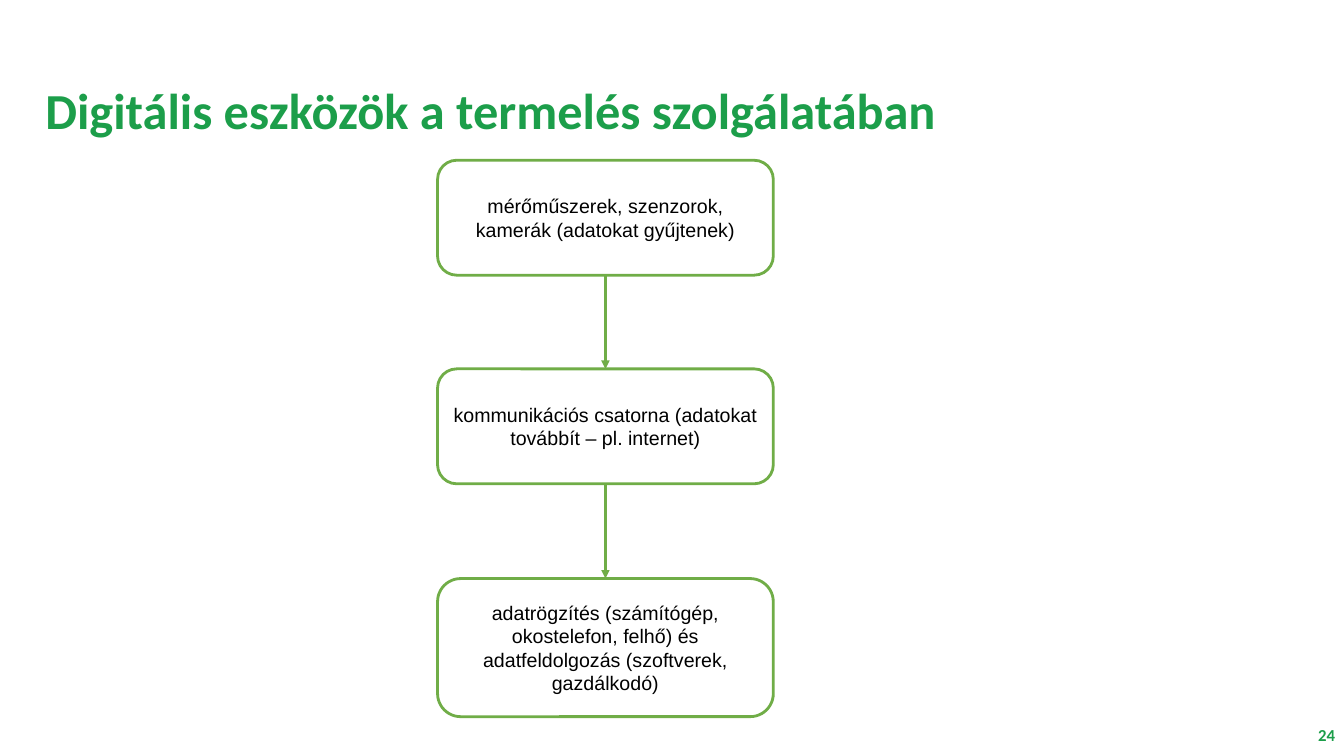
from dataclasses import dataclass
from itertools import pairwise

from lxml import etree
from pptx import Presentation
from pptx.dml.color import RGBColor
from pptx.enum.shapes import MSO_CONNECTOR, MSO_SHAPE
from pptx.enum.text import MSO_ANCHOR, PP_ALIGN
from pptx.oxml.ns import qn
from pptx.util import Inches, Pt

ROUNDED = MSO_SHAPE.ROUNDED_RECTANGLE
STRAIGHT = MSO_CONNECTOR.STRAIGHT
MIDDLE = MSO_ANCHOR.MIDDLE
LEFT, CENTER, RIGHT = PP_ALIGN.LEFT, PP_ALIGN.CENTER, PP_ALIGN.RIGHT


@dataclass(frozen=True)
class Theme:
    """Colours, fonts and sizes of the slide."""
    heading: RGBColor = RGBColor(0x1C, 0x9E, 0x4A)
    outline: RGBColor = RGBColor(0x70, 0xAD, 0x47)
    paper: RGBColor = RGBColor(0xFF, 0xFF, 0xFF)
    ink: RGBColor = RGBColor(0, 0, 0)
    heading_font: str = "Calibri"
    body_font: str = "Arial"
    title_size: int = 36
    step_size: int = 14
    number_size: int = 12
    line_width: int = 2


THEME = Theme()
STEPS = [
    ("mérőműszerek, szenzorok, kamerák (adatokat gyűjtenek)", 0, 1.14),
    ("kommunikációs csatorna (adatokat továbbít – pl. internet)", 2.07, 1.14),
    ("adatrögzítés (számítógép, okostelefon, felhő) és "
     "adatfeldolgozás (szoftverek, gazdálkodó)", 4.15, 1.37),
]


def write(shape, text, font_name, size, color, align, bold=False):
    """Fill a shape with one vertically centred paragraph."""
    frame = shape.text_frame
    frame.text = text
    frame.word_wrap = True
    frame.vertical_anchor = MIDDLE
    paragraph = frame.paragraphs[0]
    paragraph.alignment = align
    font = paragraph.runs[0].font
    font.name, font.size, font.bold = font_name, Pt(size), bold
    font.color.rgb = color
    return paragraph


def style_line(line):
    """Apply the green outline."""
    line.color.rgb = THEME.outline
    line.width = Pt(THEME.line_width)


def place_title(slide, left, top, width, height):
    """Move and format the title placeholder."""
    title = slide.shapes.title
    title.left, title.top = Inches(left), Inches(top)
    title.width, title.height = Inches(width), Inches(height)
    paragraph = write(title, "Digitális eszközök a termelés szolgálatában",
                      THEME.heading_font, THEME.title_size, THEME.heading,
                      LEFT, bold=True)
    paragraph.line_spacing = 0.9


def add_step(slide, text, left, top, width, height):
    """Add one rounded step of the data flow."""
    step = slide.shapes.add_shape(ROUNDED, Inches(left), Inches(top),
                                  Inches(width), Inches(height))
    step.shadow.inherit = False
    step.fill.solid()
    step.fill.fore_color.rgb = THEME.paper
    style_line(step.line)
    write(step, text, THEME.body_font, THEME.step_size, THEME.ink, CENTER)
    return step


def add_arrow(slide, upper, lower):
    """Connect the bottom of one step to the top of the next."""
    arrow = slide.shapes.add_connector(STRAIGHT, 0, 0, 0, 0)
    arrow.begin_connect(upper, 2)
    arrow.end_connect(lower, 0)
    style_line(arrow.line)
    etree.SubElement(arrow.line._get_or_add_ln(), qn("a:tailEnd"), type="triangle")
    etree.SubElement(arrow._element.spPr, qn("a:effectLst"))


def add_data_flow(slide, left, top, width):
    """Stack the steps and join neighbours with arrows."""
    steps = [add_step(slide, text, left, top + offset, width, height)
             for text, offset, height in STEPS]
    for upper, lower in pairwise(steps):
        add_arrow(slide, upper, lower)


def add_page_number(slide, left, top, width, height):
    """Add the page number in the corner."""
    number = slide.shapes.add_textbox(Inches(left), Inches(top),
                                      Inches(width), Inches(height))
    write(number, "24", THEME.heading_font, THEME.number_size,
          THEME.heading, RIGHT, bold=True)


def main():
    """Build and save the slide."""
    deck = Presentation()
    deck.slide_width, deck.slide_height = Inches(13.33), Inches(7.5)
    slide = deck.slides.add_slide(deck.slide_layouts[5])
    place_title(slide, 0.35, 0.4, 12.64, 1.45)
    add_data_flow(slide, 4.34, 1.59, 3.33)
    add_page_number(slide, 12.78, 7.09, 0.56, 0.4)
    deck.save("out.pptx")


if __name__ == "__main__":
    main()
